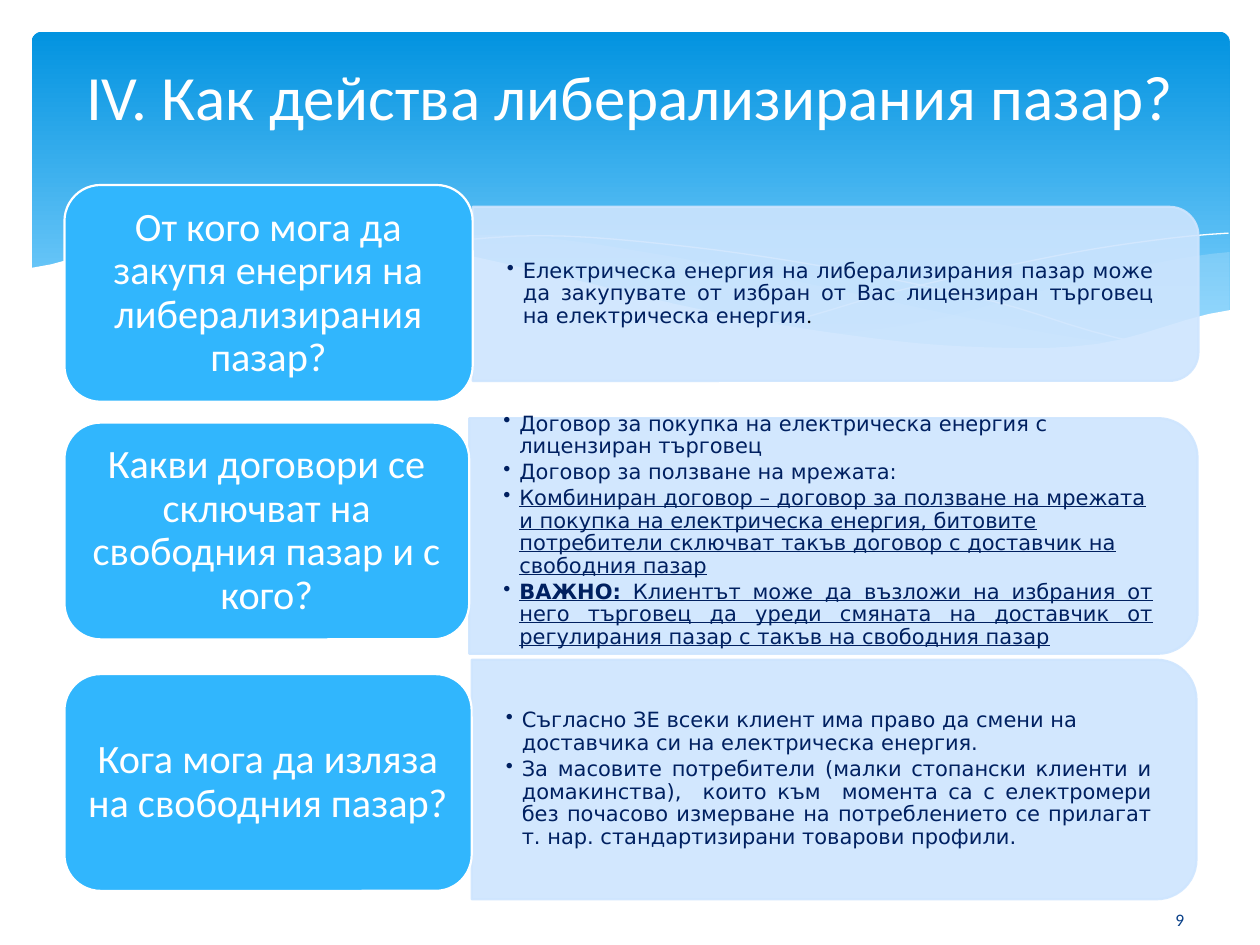
"""Build the slide on how the liberalised energy market works."""
from lxml import etree
from pptx import Presentation, util as u
from pptx.dml.color import RGBColor
from pptx.enum import shapes as s, text as t
from pptx.oxml.ns import qn

WHITE = RGBColor.from_string("FFFFFF")
BLACK = RGBColor.from_string("000000")
DEEP = RGBColor.from_string("0293E0")
LIGHT = RGBColor.from_string("83D3FE")
MIST = RGBColor.from_string("C6E7FC")
PALE = RGBColor.from_string("CEE5FE")
BLUE = RGBColor.from_string("31B6FD")
NAVY = RGBColor.from_string("002060")
INK = RGBColor.from_string("073E87")
LEFT, MID, FULL = t.PP_ALIGN.LEFT, t.PP_ALIGN.CENTER, t.PP_ALIGN.JUSTIFY


def write(par, words, size=12, font="DejaVu Sans", color=NAVY, bold=False, under=False):
    run = par.add_run()
    run.text = words
    run.font.size, run.font.name, run.font.color.rgb = u.Pt(size), font, color
    run.font.bold, run.font.underline = bold, under


def tint(part, color, alpha):
    part.solid()
    part.fore_color.rgb = color
    for node in part._xPr.iter(qn("a:srgbClr")):
        etree.SubElement(node, qn("a:alpha")).set("val", str(alpha * 1000))


deck = Presentation()
deck.slide_width, deck.slide_height = u.Cm(25.4), u.Cm(19.05)
slide = deck.slides.add_slide(deck.slide_layouts[6])
items = slide.shapes

band = items.add_shape(s.MSO_SHAPE.ROUNDED_RECTANGLE,
                       u.Cm(0.64), u.Cm(0.64), u.Cm(24.15), u.Cm(6.86))
band.adjustments[0] = 0.03
band.shadow.inherit = False
band.line.fill.background()
band.fill.gradient()
band.fill.gradient_angle = 270
for stop, spot, color in zip(band.fill.gradient_stops, (0, 0.9), (DEEP, LIGHT)):
    stop.position, stop.color.rgb = spot, color

# fill, opacity, edges: first x, last x, heights at equal steps between them
waves = [
    (MIST, 29, [(661, 976, (265, 275, 278, 273, 247)), (976, 661, (200, 213, 233, 254, 265))]),
    (MIST, 40, [(286, 893, (191, 187, 203, 227, 253, 273)),
                (893, 286, (273, 277, 264, 240, 212, 191))]),
    (None, 0, [(309, 907, (195, 187, 196, 214, 239, 272))]),
    (None, 0, [(613, 975, (257, 233, 212, 195, 185))]),
    (WHITE, 100, [(23, 977, (213, 186, 185, 197, 220, 245, 264, 275, 273, 246)),
                  (977, 23, (329, 329))]),
]
for color, alpha, edges in waves:
    dots = []
    for start, end, ys in edges:
        step = (end - start) / (len(ys) - 1)
        for i in range(len(ys) - 1):
            a, b, c, d = ys[max(i - 1, 0)], ys[i], ys[i + 1], ys[min(i + 2, len(ys) - 1)]
            for k in range(7):
                f = k / 6
                y = b + f / 2 * (c - a + f * (2 * a - 5 * b + 4 * c - d
                                              + f * (3 * (b - c) + d - a)))
                dots.append((10 * (start + (i + f) * step), 10 * y))
    path = items.build_freeform(*dots[0], scale=u.Cm(0.00254 * 100) / 100)
    path.add_line_segments(dots[1:], close=color is not None)
    wave = path.convert_to_shape()
    wave.shadow.inherit = False
    if color is None:
        wave.fill.background()
        wave.line.color.rgb, wave.line.width = WHITE, 0
    else:
        tint(wave.fill, color, alpha)
        wave.line.fill.background()

# panel box, text top and height, label top, label, points (align, underline, lead, words, end)
rows = [
    ((9.53, 4.17, 14.63, 3.51), 4.34, 3.18, 3.73,
     "От кого мога да закупя енергия на либерализирания пазар?",
     [(FULL, False, "", "Електрическа енергия на либерализирания пазар може да закупувате "
       "от избран от Вас лицензиран търговец на електрическа енергия", ".")]),
    ((9.46, 8.43, 14.68, 4.75), 8.56, 4.29, 8.52,
     "Какви договори се сключват на свободния пазар и с кого?",
     [(LEFT, False, "", "Договор за покупка на електрическа енергия с лицензиран търговец", ""),
      (LEFT, False, "", "Договор за ползване на мрежата:", ""),
      (LEFT, True, "", "Комбиниран договор – договор за ползване на мрежата и покупка на "
       "електрическа енергия, битовите потребители сключват такъв договор с доставчик на "
       "свободния пазар", ""),
      (FULL, True, "ВАЖНО:", " Клиентът може да възложи на избрания от него търговец да "
       "уреди смяната на доставчик от регулирания пазар с такъв на свободния пазар", "")]),
    ((9.51, 13.3, 14.61, 4.83), 13.54, 4.34, 13.59,
     "Кога мога да изляза на свободния пазар?",
     [(LEFT, False, "", "Съгласно ЗЕ всеки клиент има право да смени на доставчика си на "
       "електрическа енергия.", ""),
      (FULL, False, "", "За масовите потребители (малки стопански клиенти и домакинства),  "
       "които към  момента са с електромери без почасово измерване на потреблението се "
       "прилагат т. нар. стандартизирани товарови профили.", "")]),
]
for (x, y, w, h), top, tall, head, name, points in rows:
    panel = items.add_shape(s.MSO_SHAPE.ROUND_2_SAME_RECTANGLE, u.Cm(x + (w - h) / 2),
                            u.Cm(y + (h - w) / 2), u.Cm(h), u.Cm(w))
    panel.rotation = 90
    panel.shadow.inherit = False
    panel.line.width = u.Pt(1.25)
    for part in (panel.fill, panel.line.fill):
        tint(part, PALE, 90)

    frame = items.add_textbox(u.Cm(x), u.Cm(top), u.Cm(w - 0.2), u.Cm(tall)).text_frame
    frame.word_wrap = True
    frame.vertical_anchor = t.MSO_ANCHOR.MIDDLE
    frame.margin_left = frame.margin_right = u.Cm(0.69)
    frame.margin_top = frame.margin_bottom = u.Cm(0.36)
    for i, (align, under, lead, words, end) in enumerate(points):
        par = frame.add_paragraph() if i else frame.paragraphs[0]
        par.alignment, par.line_spacing, par.space_after = align, 0.9, u.Pt(1.8)
        props = par._p.get_or_add_pPr()
        props.set("marL", str(u.Cm(0.32)))
        props.set("indent", str(-u.Cm(0.32)))
        etree.SubElement(props, qn("a:buChar")).set("char", "•")
        if lead:
            write(par, lead, bold=True, under=under)
        write(par, words, under=under)
        if end:
            write(par, end, font="Calibri", color=BLACK)

    label = items.add_shape(s.MSO_SHAPE.ROUNDED_RECTANGLE,
                            u.Cm(1.3), u.Cm(head), u.Cm(x - 1.3), u.Cm(4.37))
    label.shadow.inherit = False
    label.fill.solid()
    label.fill.fore_color.rgb = BLUE
    label.line.color.rgb, label.line.width = WHITE, u.Pt(1.25)
    frame = label.text_frame
    frame.word_wrap = True
    frame.vertical_anchor = t.MSO_ANCHOR.MIDDLE
    par = frame.paragraphs[0]
    par.alignment, par.line_spacing = MID, 0.9
    write(par, name, size=23, font="Calibri", color=WHITE)

for box, words, size, color in [
    ((0.3, 0.33, 24.79, 3.18), "IV. Как действа либерализирания пазар?", 36, WHITE),
    ((22.17, 18.03, 3.23, 1.02), "9", 10, INK),
]:
    frame = items.add_textbox(*map(u.Cm, box)).text_frame
    frame.word_wrap = True
    frame.vertical_anchor = t.MSO_ANCHOR.MIDDLE
    frame.paragraphs[0].alignment = MID
    write(frame.paragraphs[0], words, size=size, font="Calibri", color=color)

deck.save("out.pptx")
